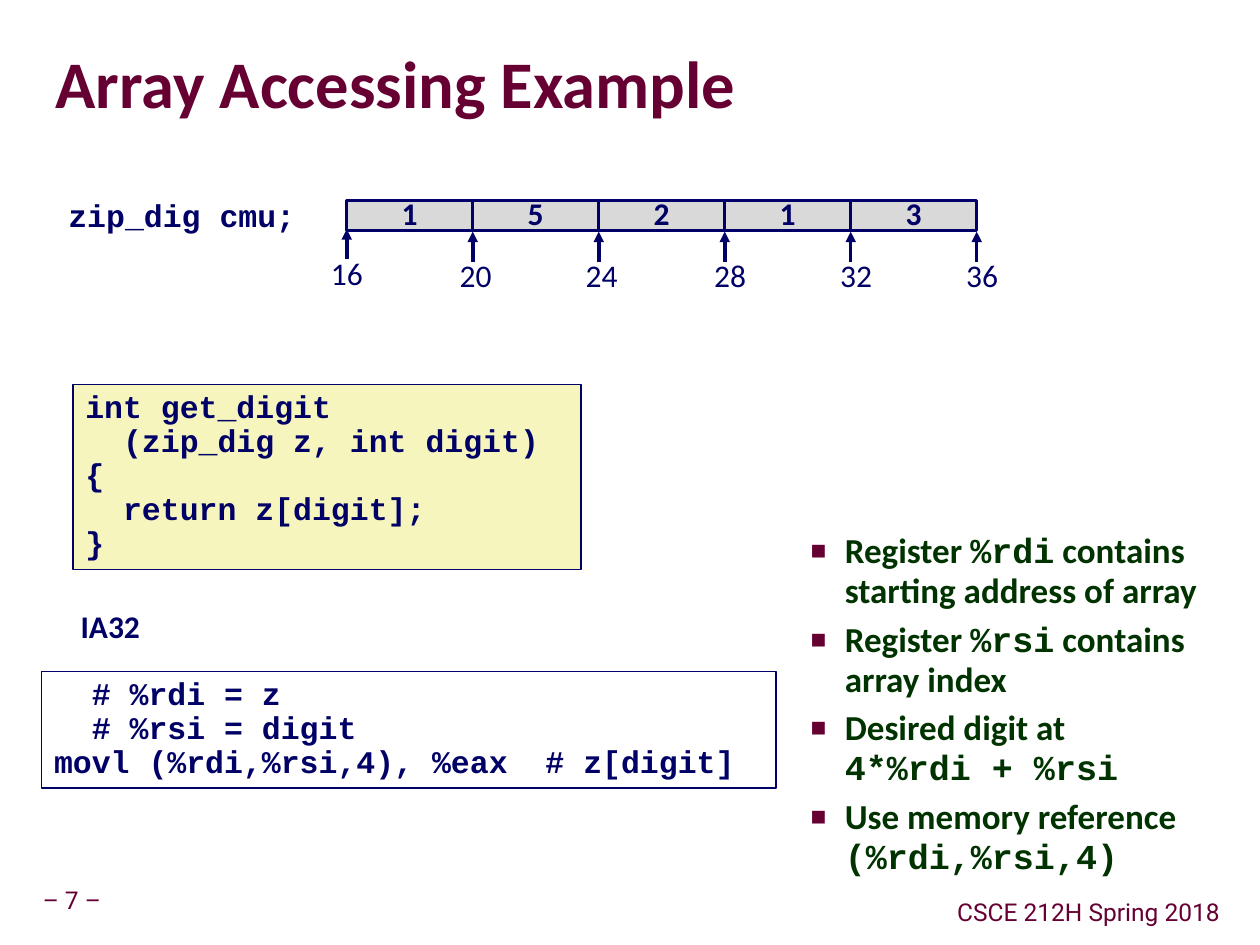
from lxml.etree import SubElement
from pptx import Presentation
from pptx.dml.color import RGBColor
from pptx.enum.shapes import MSO_CONNECTOR as Link, MSO_SHAPE as Kind
from pptx.enum.text import MSO_ANCHOR as Anchor, MSO_AUTO_SIZE as Auto, PP_ALIGN as Align
from pptx.oxml import parse_xml
from pptx.oxml.ns import nsdecls, qn
from pptx.util import Cm, Pt

INK = {"navy": "000066", "wine": "660033", "green": "003300",
       "cream": "F6F5BD", "grey": "D9D9D9", "shade": "999999"}
MONO = "Courier New"


def write(shape, *lines, size=18, font="Calibri", color="navy", bold=True,
          align=Align.LEFT, anchor=Anchor.TOP, pad=(0.25, 0.13), wrap=True,
          fit=Auto.SHAPE_TO_FIT_TEXT, lead=0.9, gap=0, bullet=False):
    """Write paragraphs; `ticks` mark code and a vertical tab breaks a line."""
    frame = shape.text_frame
    frame.word_wrap, frame.auto_size = wrap, fit
    frame.vertical_anchor = anchor
    frame.margin_left = frame.margin_right = Cm(pad[0])
    frame.margin_top = frame.margin_bottom = Cm(pad[1])
    for i, line in enumerate(lines):
        para = frame.add_paragraph() if i else frame.paragraphs[0]
        if bullet:
            props = para._p.get_or_add_pPr()
            props.set("marL", str(Cm(1.11)))
            props.set("indent", str(Cm(-0.69)))
            tint = SubElement(props, qn("a:buClr"))
            SubElement(tint, qn("a:srgbClr"), val=INK["wine"])
            SubElement(props, qn("a:buSzPct"), val="75000")
            SubElement(props, qn("a:buFont"), typeface="Arial")
            SubElement(props, qn("a:buChar"), char="■")
        para.alignment, para.line_spacing = align, lead
        para.space_before = Pt(gap if i else 0)
        for j, piece in enumerate(line.split("`")):
            for k, text in enumerate(piece.split("\v")):
                if k:
                    para.add_line_break()
                if text:
                    run = para.add_run()
                    run.text = text
                    run.font.size, run.font.bold = Pt(size), bold
                    run.font.name = MONO if j % 2 else font
                    run.font.color.rgb = RGBColor.from_string(INK[color])


def draw(left, top, width, height, fill=None, line=1):
    """Add an outlined rectangle."""
    box = slide.shapes.add_shape(Kind.RECTANGLE, Cm(left), Cm(top), Cm(width), Cm(height))
    box.shadow.inherit = False
    if fill:
        box.fill.solid()
        box.fill.fore_color.rgb = RGBColor.from_string(INK[fill])
    else:
        box.fill.background()
    box.line.color.rgb = RGBColor.from_string(INK["navy"])
    box.line.width = Pt(line)
    return box


deck = Presentation()
deck.slide_width, deck.slide_height = Cm(25.4), Cm(19.05)
slide = deck.slides.add_slide(deck.slide_layouts[1])
title, body = slide.placeholders

# Title with its text shadow
title.left, title.top, title.width, title.height = Cm(1.12), Cm(0.69), Cm(24.2), Cm(2.16)
write(title, "Array Accessing Example", size=38, color="wine", lead=0.87,
      anchor=Anchor.MIDDLE, pad=(0, 0), fit=Auto.NONE)
look = title.text_frame.paragraphs[0].runs[0]._r.rPr
look.find(qn("a:solidFill")).addnext(parse_xml(
    f'<a:effectLst {nsdecls("a")}><a:outerShdw dist="63500" dir="2700000">'
    f'<a:srgbClr val="{INK["shade"]}"/></a:outerShdw></a:effectLst>'))

# Notes on the registers
body.left, body.top, body.width, body.height = Cm(15.67), Cm(10.59), Cm(9.53), Cm(8.28)
write(body, "Register `%rdi` contains starting address of array",
      "Register `%rsi` contains \varray index",
      "Desired digit at \v`4*%rdi + %rsi`",
      "Use memory reference `(%rdi,%rsi,4)`",
      size=20, color="green", lead=0.95, gap=5, bullet=True, fit=Auto.NONE)

# Code boxes
write(draw(1.47, 7.75, 10.24, 3.73, fill="cream"),
      "int get_digit", "  (zip_dig z, int digit)", "{", "  return z[digit];", "}", font=MONO)
write(draw(0.84, 13.54, 14.81, 2.34),
      "  # %rdi = z", "  # %rsi = digit", "movl (%rdi,%rsi,4), %eax  # z[digit]", font=MONO)

# Array cells
START, STEP, TOP = 6.99, 2.54, 4.04
for i, digit in enumerate("15213"):
    cell = draw(START + i * STEP, TOP, STEP, 0.61, fill="grey", line=2)
    write(cell, digit, align=Align.CENTER, anchor=Anchor.MIDDLE, wrap=False, fit=Auto.NONE)

# Address arrows
for i in range(6):
    x, tip = Cm(START + i * STEP), 4.67 if i else 4.62
    arrow = slide.shapes.add_connector(Link.STRAIGHT, x, Cm(tip + 0.61), x, Cm(tip))
    arrow.line.color.rgb = RGBColor.from_string(INK["navy"])
    arrow.line.width = Pt(2)
    SubElement(arrow.line._get_or_add_ln(), qn("a:tailEnd"), type="triangle")
    SubElement(arrow._element.spPr, qn("a:effectLst"))

# Labels: text, left, top, width, height, format
mid = {"align": Align.CENTER}
foot = {"size": 14, "font": "Roboto", "color": "wine", "bold": False, "wrap": False,
        "anchor": Anchor.MIDDLE, "pad": (0.13, 0.13), **mid}
labels = [
    ("zip_dig cmu;", 0.84, 3.91, 5.36, 1.02, {"font": MONO, "align": Align.RIGHT}),
    ("IA32", 1.17, 12.19, 2.11, 1.27, {"wrap": False, **mid}),
    ("– 7 –", 0.61, 17.78, 1.68, 0.79, foot),
    ("CSCE 212H Spring 2018", 19.05, 18.03, 5.79, 0.79, foot),
    ("16", 6.07, 5.08, 1.85, 1.02, {"bold": False, **mid}),
]
for i in range(1, 6):
    left = 5.68 + i * STEP + (0.05 if i > 2 else 0)
    labels.append((str(16 + 4 * i), left, 5.11, 2.74, 1.02, {"bold": False, **mid}))
for text, left, top, width, height, style in labels:
    write(slide.shapes.add_textbox(Cm(left), Cm(top), Cm(width), Cm(height)), text, **style)

deck.save("out.pptx")
